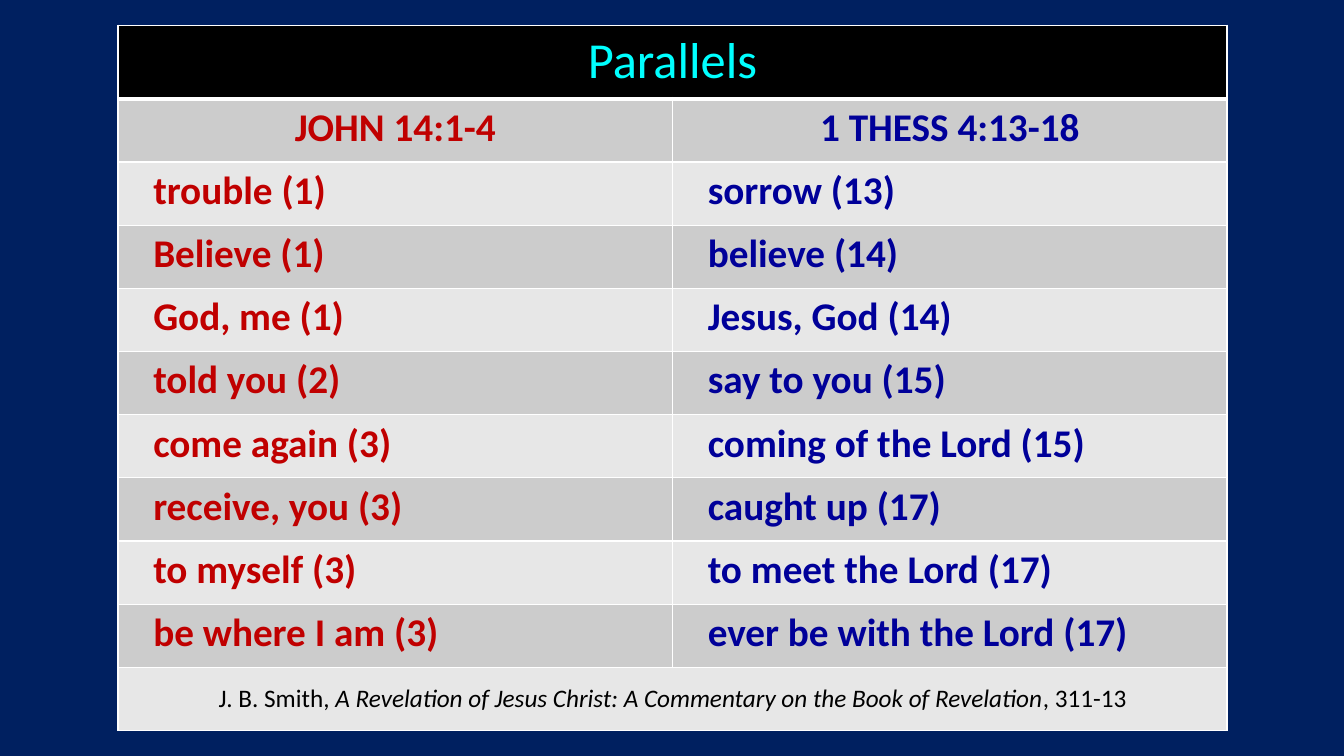
from lxml.etree import SubElement
from pptx import Presentation
from pptx.dml.color import RGBColor
from pptx.enum.text import MSO_ANCHOR, PP_ALIGN
from pptx.oxml.ns import qn
from pptx.util import Emu, Pt

PX = 9144  # EMU per px, 100 px to the inch
COLORS = {
    "navy": "002060", "black": "000000", "cyan": "00FFFF", "white": "FFFFFF",
    "red": "C00000", "blue": "000099", "dark_band": "CCCCCC", "light_band": "E7E7E7",
}
TITLE = "Parallels"
PARALLELS = [
    ("JOHN 14:1-4", "1 THESS 4:13-18"),
    ("trouble (1)", "sorrow (13)"),
    ("Believe (1)", "believe (14)"),
    ("God, me (1)", "Jesus, God (14)"),
    ("told you (2)", "say to you (15)"),
    ("come again (3)", "coming of the Lord (15)"),
    ("receive, you (3)", "caught up (17)"),
    ("to myself (3)", "to meet the Lord (17)"),
    ("be where I am (3)", "ever be with the Lord (17)"),
]
# Each part of the citation: text, italic
CITATION = [
    ("J. B. Smith, ", False),
    ("A Revelation of Jesus Christ: A Commentary on the Book of Revelation", True),
    (", 311-13", False),
]


def px(length):
    return Emu(round(length * PX))


def color(name):
    return RGBColor.from_string(COLORS[name])


def style_cell(cell, fill, top=1, bottom=1):
    """Give a cell white borders, widths in points, and a solid fill."""
    properties = cell._tc.get_or_add_tcPr()
    for side, width in (("L", 1), ("R", 1), ("T", top), ("B", bottom)):
        line = SubElement(properties, qn(f"a:ln{side}"), w=str(Pt(width)))
        line_fill = SubElement(line, qn("a:solidFill"))
        SubElement(line_fill, qn("a:srgbClr"), val=COLORS["white"])
    cell.fill.solid()
    cell.fill.fore_color.rgb = color(fill)


def write_cell(cell, parts, size, ink, bold=False, indent=0):
    """Write (text, italic) parts, centred unless indented."""
    paragraph = cell.text_frame.paragraphs[0]
    if indent:
        paragraph.level = 1
        properties = paragraph._p.get_or_add_pPr()
        properties.set("marL", str(px(indent)))
        properties.set("indent", "0")
    else:
        paragraph.alignment = PP_ALIGN.CENTER
    font = paragraph.font
    font.name, font.size, font.bold = "Calibri", Pt(size), bold
    font.color.rgb = color(ink)
    for text, italic in parts:
        run = paragraph.add_run()
        run.text = text
        if italic:
            run.font.italic = True


def add_parallels_table(slide, left, top, width, height, title_height=73):
    row_count = len(PARALLELS) + 2
    table = slide.shapes.add_table(
        row_count, 2, px(left), px(top), px(width), px(height)).table
    for column in table.columns:
        column.width = px(width / 2)
    for index, row in enumerate(table.rows):
        row.height = px((height - title_height) / (row_count - 1) if index else title_height)

    # Title across both columns
    title = table.cell(0, 0)
    title.merge(table.cell(0, 1))
    style_cell(title, "black", bottom=3)
    write_cell(title, [(TITLE, False)], 36, "cyan")

    # Column headings and paired phrases
    for row, pair in enumerate(PARALLELS, start=1):
        for column, (text, ink) in enumerate(zip(pair, ("red", "blue"))):
            cell = table.cell(row, column)
            style_cell(cell, "dark_band" if row % 2 else "light_band",
                       top=3 if row == 1 else 1)
            write_cell(cell, [(text, False)], 28, ink, bold=True,
                       indent=0 if row == 1 else 25)

    # Citation across both columns
    citation = table.cell(row_count - 1, 0)
    citation.merge(table.cell(row_count - 1, 1))
    citation.vertical_anchor = MSO_ANCHOR.MIDDLE
    style_cell(citation, "light_band")
    write_cell(citation, CITATION, 18, "black")


def main():
    presentation = Presentation()
    presentation.slide_width, presentation.slide_height = px(1333), px(750)
    slide = presentation.slides.add_slide(presentation.slide_layouts[6])
    slide.background.fill.solid()
    slide.background.fill.fore_color.rgb = color("navy")
    add_parallels_table(slide, 117, 25, 1100, 700)
    presentation.save("out.pptx")


if __name__ == "__main__":
    main()
